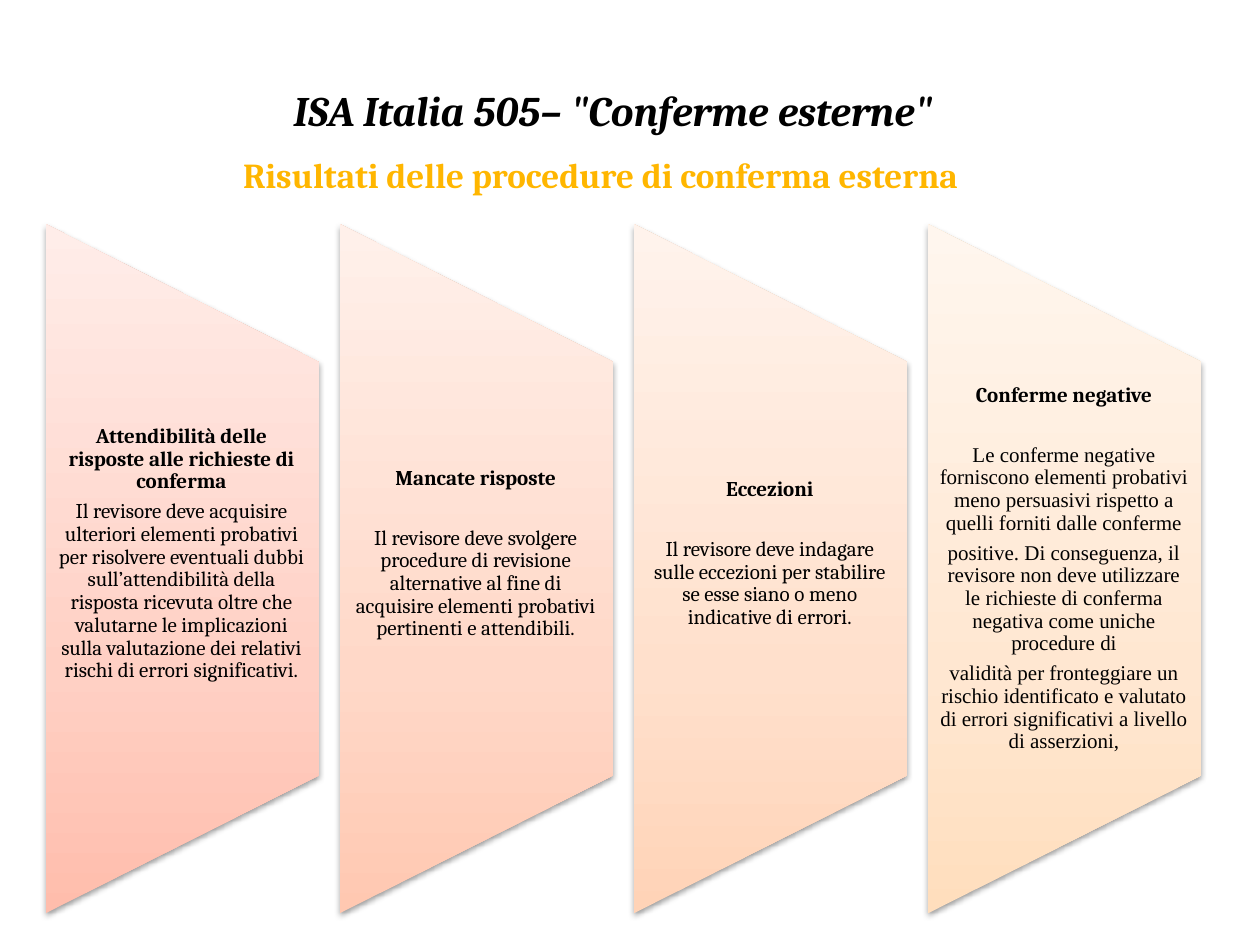
from lxml import etree
from pptx import Presentation
from pptx import util as u
from pptx.dml.color import RGBColor
from pptx.enum import shapes, text
from pptx.oxml.ns import qn

BLACK = RGBColor(0x00, 0x00, 0x00)
WHITE = RGBColor(0xFF, 0xFF, 0xFF)
AMBER = RGBColor(0xFF, 0xB6, 0x00)
HEAD_FONT, ALT_FONT = "Cambria", "Times New Roman"
A_NS = "http://schemas.openxmlformats.org/drawingml/2006/main"

# Gradient from bottom to top: position in percent, colour
STOPS = (0, 35, 100)
PANELS = [
    dict(colors=("FFBDAC", "FFD0C4", "FFEDE9"), gap=4.2, bottom=0.6, font=HEAD_FONT,
         heading="Attendibilità delle risposte alle richieste di conferma",
         body=["Il revisore deve acquisire ulteriori elementi probativi per risolvere "
               "eventuali dubbi sull’attendibilità della risposta ricevuta oltre che "
               "valutarne le implicazioni sulla valutazione dei relativi rischi di "
               "errori significativi."]),
    dict(colors=("FFC8B1", "FFD8C8", "FFF0EA"), gap=21.3, bottom=0.6, font=HEAD_FONT,
         heading="Mancate risposte",
         body=["Il revisore deve svolgere procedure di revisione alternative al fine di "
               "acquisire elementi probativi pertinenti e attendibili."]),
    dict(colors=("FFD3B7", "FFE0CC", "FFF3EC"), gap=21.3, bottom=0.6, font=HEAD_FONT,
         heading="Eccezioni",
         body=["Il revisore deve indagare sulle eccezioni per stabilire se esse siano o "
               "meno indicative di errori."]),
    dict(colors=("FFDEBD", "FFE7D1", "FFF6EE"), gap=21.3, bottom=0, font=ALT_FONT,
         heading="Conferme negative",
         body=["Le conferme negative forniscono elementi probativi meno persuasivi "
               "rispetto a quelli forniti dalle conferme",
               "positive. Di conseguenza, il revisore non deve utilizzare le richieste "
               "di conferma negativa come uniche procedure di",
               "validità per fronteggiare un rischio identificato e valutato di errori "
               "significativi a livello di asserzioni,"]),
]


def set_margins(tf, left, top, right, bottom):
    tf.margin_left, tf.margin_top = u.Cm(left), u.Cm(top)
    tf.margin_right, tf.margin_bottom = u.Cm(right), u.Cm(bottom)


def format_runs(p, size, color, name=HEAD_FONT, bold=False, italic=False):
    for r in p.runs:
        r.font.size, r.font.name = u.Pt(size), name
        r.font.bold, r.font.italic = bold, italic
        r.font.color.rgb = color


def add_title(s, x, y, w, h):
    tf = s.shapes.add_textbox(u.Cm(x), u.Cm(y), u.Cm(w), u.Cm(h)).text_frame
    tf.word_wrap = True
    set_margins(tf, 0, 0, 0, 0)
    tf.text = 'ISA Italia 505– "Conferme esterne"'
    format_runs(tf.paragraphs[0], 24, BLACK, bold=True, italic=True)


def add_subtitle_frame(s, x, y, w, h):
    sp = s.shapes.add_shape(shapes.MSO_SHAPE.RECTANGLE, u.Cm(x), u.Cm(y), u.Cm(w), u.Cm(h))
    sp.shadow.inherit = False
    sp.fill.background()
    sp.line.color.rgb = WHITE
    sp.line.width = u.Pt(0.75)
    tf = sp.text_frame
    tf.word_wrap = True
    tf.vertical_anchor = text.MSO_ANCHOR.TOP
    tf.text = "Risultati delle procedure di conferma esterna"
    p = tf.paragraphs[0]
    p.alignment = text.PP_ALIGN.LEFT
    p.space_after = u.Pt(9)
    format_runs(p, 20, AMBER, bold=True)


def add_gradient(sp, colors):
    """Upright three-stop gradient that does not turn with the shape."""
    stops = "".join(f'<a:gs pos="{pos * 1000}"><a:srgbClr val="{c}"/></a:gs>'
                    for pos, c in zip(STOPS, colors))
    grad = etree.fromstring(
        f'<a:gradFill xmlns:a="{A_NS}" rotWithShape="0"><a:gsLst>{stops}</a:gsLst>'
        '<a:lin ang="16200000" scaled="1"/></a:gradFill>')
    sp.element.spPr.find(qn("a:prstGeom")).addnext(grad)


def add_soft_shadow(sp):
    sp.shadow.inherit = False
    sp.element.spPr.find(qn("a:effectLst")).append(etree.fromstring(
        f'<a:outerShdw xmlns:a="{A_NS}" blurRad="40000" dist="20000" dir="5400000" '
        'rotWithShape="0"><a:srgbClr val="000000"><a:alpha val="38000"/></a:srgbClr>'
        '</a:outerShdw>'))


def add_panel(s, x, y, w, h, panel):
    """Trapezoid standing on its side, with text in its middle three fifths."""
    sp = s.shapes.add_shape(shapes.MSO_SHAPE.FLOWCHART_MANUAL_OPERATION,
                            u.Cm(x + (w - h) / 2), u.Cm(y + (h - w) / 2), u.Cm(h), u.Cm(w))
    sp.rotation = 270
    add_gradient(sp, panel["colors"])
    sp.line.fill.background()
    add_soft_shadow(sp)

    tf = s.shapes.add_textbox(u.Cm(x), u.Cm(y + h * 0.2), u.Cm(w), u.Cm(h * 0.6)).text_frame
    tf.word_wrap = True
    tf.vertical_anchor = text.MSO_ANCHOR.MIDDLE
    set_margins(tf, 0.2, 0, 0.23, panel["bottom"])
    tf.text = "\n".join([panel["heading"]] + panel["body"])
    for i, p in enumerate(tf.paragraphs):
        p.alignment = text.PP_ALIGN.CENTER
        p.line_spacing = 0.9
        p.space_after = u.Pt(4.2 if i else panel["gap"])
        format_runs(p, 12, BLACK, panel["font"] if i else HEAD_FONT, bold=i == 0)


def add_panels(s, x, y, w, h, step):
    for i, panel in enumerate(PANELS):
        add_panel(s, x + i * step, y, w, h, panel)


def main():
    prs = Presentation()
    prs.slide_width, prs.slide_height = u.Cm(25.4), u.Cm(19.05)
    s = prs.slides.add_slide(prs.slide_layouts[6])
    add_title(s, 5.92, 1.7, 22.43, 1.7)
    add_subtitle_frame(s, 4.65, 2.97, 22.23, 14.17)
    add_panels(s, 0.92, 4.52, 5.51, 13.89, step=5.93)
    prs.save("out.pptx")


if __name__ == "__main__":
    main()
